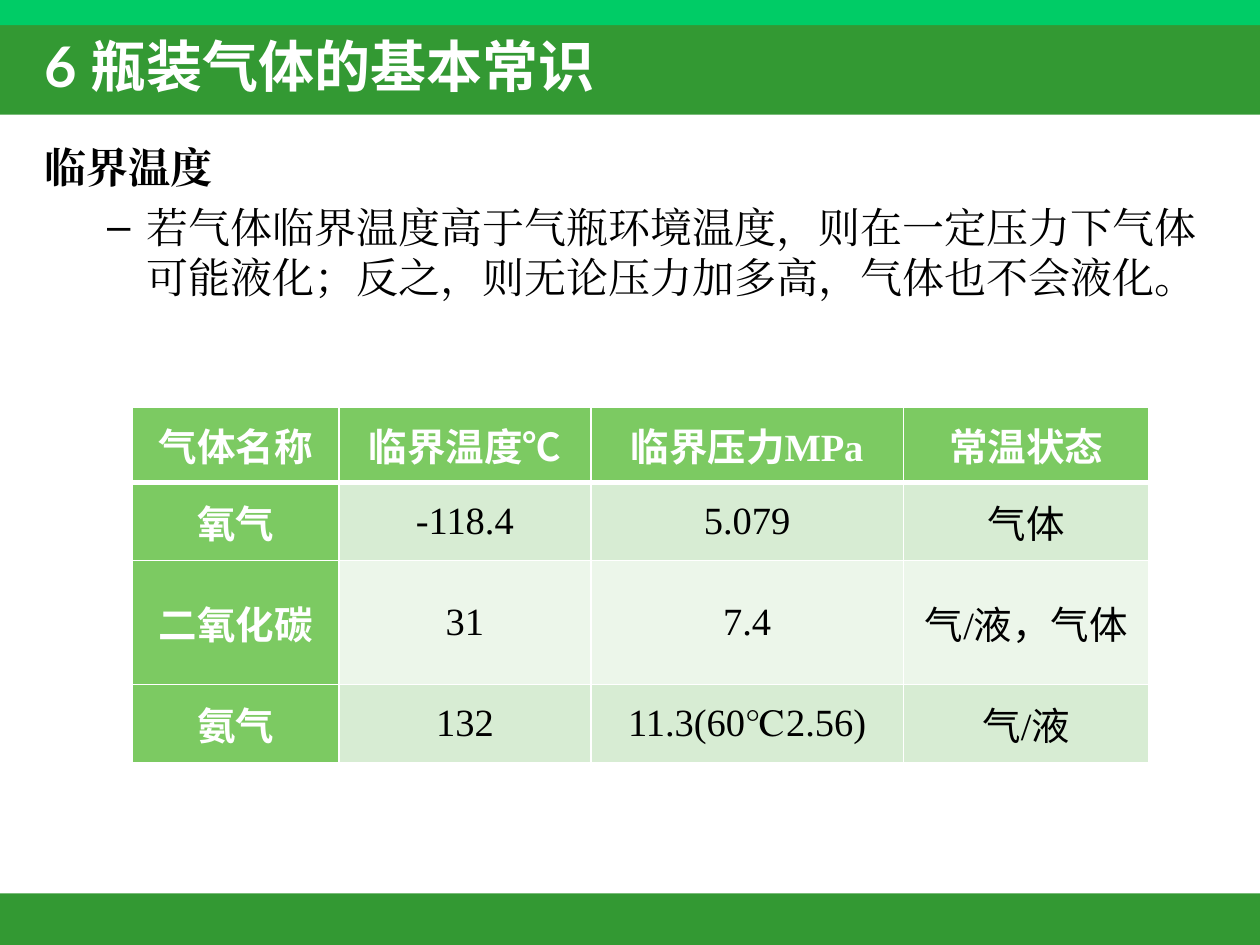
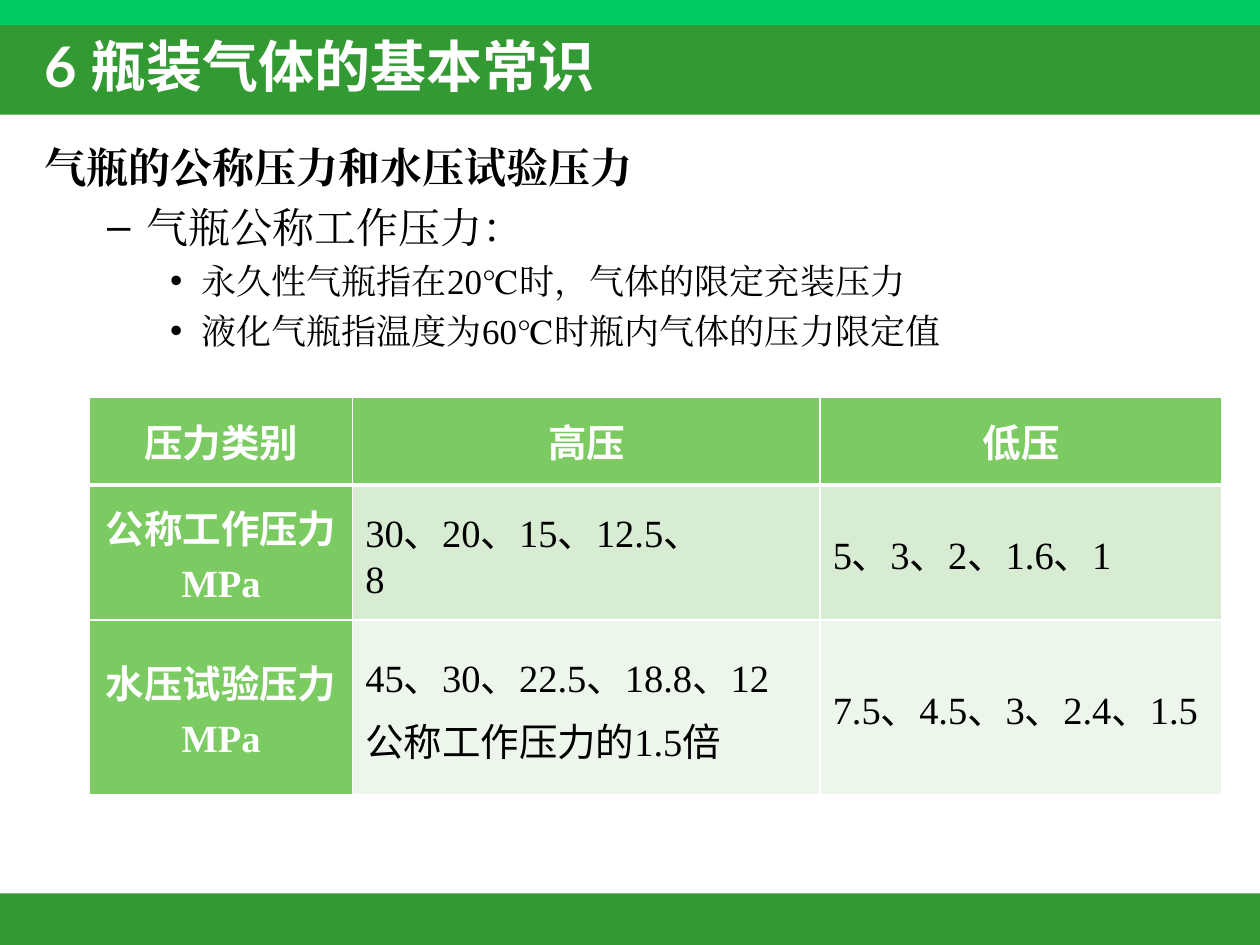
from lxml import etree
from pptx import Presentation
from pptx.dml.color import RGBColor
from pptx.enum.shapes import MSO_SHAPE
from pptx.enum.text import MSO_ANCHOR, MSO_AUTO_SIZE, PP_ALIGN
from pptx.oxml.ns import qn
from pptx.util import Inches, Pt

RECTANGLE = MSO_SHAPE.RECTANGLE
MIDDLE, TOP = MSO_ANCHOR.MIDDLE, MSO_ANCHOR.TOP
NO_FIT = MSO_AUTO_SIZE.NONE
LEFT, CENTER = PP_ALIGN.LEFT, PP_ALIGN.CENTER

WHITE, BLACK = "FFFFFF", "000000"
BAND_GREEN, TOP_GREEN = "339933", "00CC66"
HEADER_GREEN, ROW_FILLS = "7CCA62", ("D7ECD3", "ECF6EA")
TITLE_FONT, BODY_FONT = "Lato", "Times New Roman"
TITLE = "6 瓶装气体的基本常识"

BANDS = [
    (7.09, 0.41, BAND_GREEN),
    (0.2, 0.71, BAND_GREEN),
    (0, 0.2, TOP_GREEN),
]
TITLE_FORMAT = {"name": TITLE_FONT, "size": Pt(32), "bold": True}
LEVEL_FORMATS = [
    {"name": BODY_FONT, "size": Pt(24), "bold": True},
    {"name": BODY_FONT, "size": Pt(24), "bold": False},
    {"name": BODY_FONT, "size": Pt(20), "bold": False},
]
LEVEL_SPACES = [Pt(5.5), Pt(5.5), Pt(4.5)]

CRITICAL_POINTS = [
    (0, "临界温度"),
    (1, "若气体临界温度高于气瓶环境温度，则在一定压力下气体可能液化；"
        "反之，则无论压力加多高，气体也不会液化。"),
]
CRITICAL_ROWS = [
    ["气体名称", "临界温度℃", "临界压力MPa", "常温状态"],
    ["氧气", "-118.4", "5.079", "气体"],
    ["二氧化碳", "31", "7.4", "气/液，气体"],
    ["氨气", "132", "11.3(60℃2.56)", "气/液"],
]
PRESSURE_POINTS = [
    (0, "气瓶的公称压力和水压试验压力"),
    (1, "气瓶公称工作压力："),
    (2, "永久性气瓶指在20℃时，气体的限定充装压力"),
    (2, "液化气瓶指温度为60℃时瓶内气体的压力限定值"),
]
PRESSURE_ROWS = [
    ["压力类别", "高压", "低压"],
    ["公称工作压力\nMPa", "30、20、15、12.5、\v8", "5、3、2、1.6、1"],
    ["水压试验压力\nMPa", "45、30、22.5、18.8、12\n公称工作压力的1.5倍",
     "7.5、4.5、3、2.4、1.5"],
]


def rgb(value):
    """Turn a hex string into a colour."""
    return RGBColor.from_string(value)


def apply(target, values):
    """Set each attribute of the target from a dict."""
    for name, value in values.items():
        setattr(target, name, value)


def style_spans(paragraph, values, color):
    """Format every run of a paragraph."""
    for span in paragraph.runs:
        apply(span.font, values)
        span.font.color.rgb = rgb(color)


def add_master_bands(deck):
    """Put the coloured bands behind everything on the slide master."""
    page = deck.slides[0]
    tree = deck.slide_master.shapes.element
    for index, (top, height, color) in enumerate(BANDS):
        band = page.shapes.add_shape(
            RECTANGLE, 0, Inches(top), deck.slide_width, Inches(height))
        band.shadow.inherit = False
        band.fill.solid()
        band.fill.fore_color.rgb = rgb(color)
        band.line.fill.background()
        band.element.nvSpPr.cNvPr.set("id", str(101 + index))
        tree.insert(2 + index, band.element)


def place(box, top, height, anchor):
    """Move a placeholder and fix its frame settings."""
    apply(box, {"left": Inches(0.25), "top": Inches(top),
                "width": Inches(9.46), "height": Inches(height)})
    apply(box.text_frame, {"auto_size": NO_FIT, "word_wrap": True,
                           "vertical_anchor": anchor})


def fill_title(page):
    """Write the chapter title."""
    box = page.shapes.title
    place(box, 0.12, 0.8, MIDDLE)
    box.text_frame.text = TITLE
    paragraph = box.text_frame.paragraphs[0]
    paragraph.alignment = LEFT
    style_spans(paragraph, TITLE_FORMAT, WHITE)


def fill_body(page, points, height):
    """Write the multilevel list in the body placeholder."""
    box = page.placeholders[1]
    place(box, 1.07, height, TOP)
    box.text_frame.text = "\n".join(text for _, text in points)
    for index, (level, _) in enumerate(points):
        paragraph = box.text_frame.paragraphs[index]
        paragraph.level = level
        paragraph.space_before = LEVEL_SPACES[level] if index else Pt(0)
        if level == 0:
            properties = paragraph._p.get_or_add_pPr()
            properties.set("marL", "0")
            properties.set("indent", "0")
            etree.SubElement(properties, qn("a:buNone"))
        style_spans(paragraph, LEVEL_FORMATS[level], BLACK)
        for span in paragraph.runs:
            etree.SubElement(span._r.get_or_add_rPr(), qn("a:ea"), typeface=BODY_FONT)


def add_borders(cell, widths):
    """Draw white cell borders with the given point widths by side."""
    properties = cell._tc.get_or_add_tcPr()
    for index, (side, width) in enumerate(widths.items()):
        line = etree.Element(qn(f"a:ln{side}"), w=str(Pt(width)))
        fill = etree.SubElement(line, qn("a:solidFill"))
        etree.SubElement(fill, qn("a:srgbClr"), val=WHITE)
        properties.insert(index, line)


def fill_cell(cell, text, row, column, value_align):
    """Write and format one table cell."""
    is_label = row == 0 or column == 0
    cell.text = text
    cell.vertical_anchor = MIDDLE
    cell.fill.solid()
    cell.fill.fore_color.rgb = rgb(HEADER_GREEN if is_label else ROW_FILLS[(row - 1) % 2])
    values = {"name": BODY_FONT, "size": Pt(22), "bold": is_label}
    for index, paragraph in enumerate(cell.text_frame.paragraphs):
        paragraph.alignment = CENTER if is_label else value_align
        paragraph.space_before = Pt(5) if index else Pt(0)
        style_spans(paragraph, values, WHITE if is_label else BLACK)
    add_borders(cell, {"L": 1, "R": 1, "T": 3 if row == 1 else 1,
                       "B": 3 if row == 0 else 1})


def add_gas_table(page, rows, left, top, widths, heights, value_align):
    """Add a table with a green header row and label column."""
    table = page.shapes.add_table(
        len(rows), len(widths), Inches(left), Inches(top),
        Inches(sum(widths)), Inches(sum(heights))).table
    for column, width in zip(table.columns, widths):
        column.width = Inches(width)
    for row, height in zip(table.rows, heights):
        row.height = Inches(height)
    for row, texts in enumerate(rows):
        for column, text in enumerate(texts):
            fill_cell(table.cell(row, column), text, row, column, value_align)


def add_page(deck, points, body_height):
    """Add a slide with the shared title and its list."""
    page = deck.slides.add_slide(deck.slide_layouts[1])
    fill_title(page)
    fill_body(page, points, body_height)
    return page


def main():
    """Build and save the deck."""
    deck = Presentation()
    deck.slide_width, deck.slide_height = Inches(10), Inches(7.5)
    page = add_page(deck, CRITICAL_POINTS, 5.83)
    add_master_bands(deck)
    add_gas_table(page, CRITICAL_ROWS, 1.05, 3.23, [1.64, 2, 2.48, 1.95],
                  [0.6] + [0.62] * 3, CENTER)
    page = add_page(deck, PRESSURE_POINTS, 1.92)
    add_gas_table(page, PRESSURE_ROWS, 0.71, 3.15, [2.09, 3.71, 3.19],
                  [0.7] + [1.07] * 2, LEFT)
    deck.save("out.pptx")


if __name__ == "__main__":
    main()
